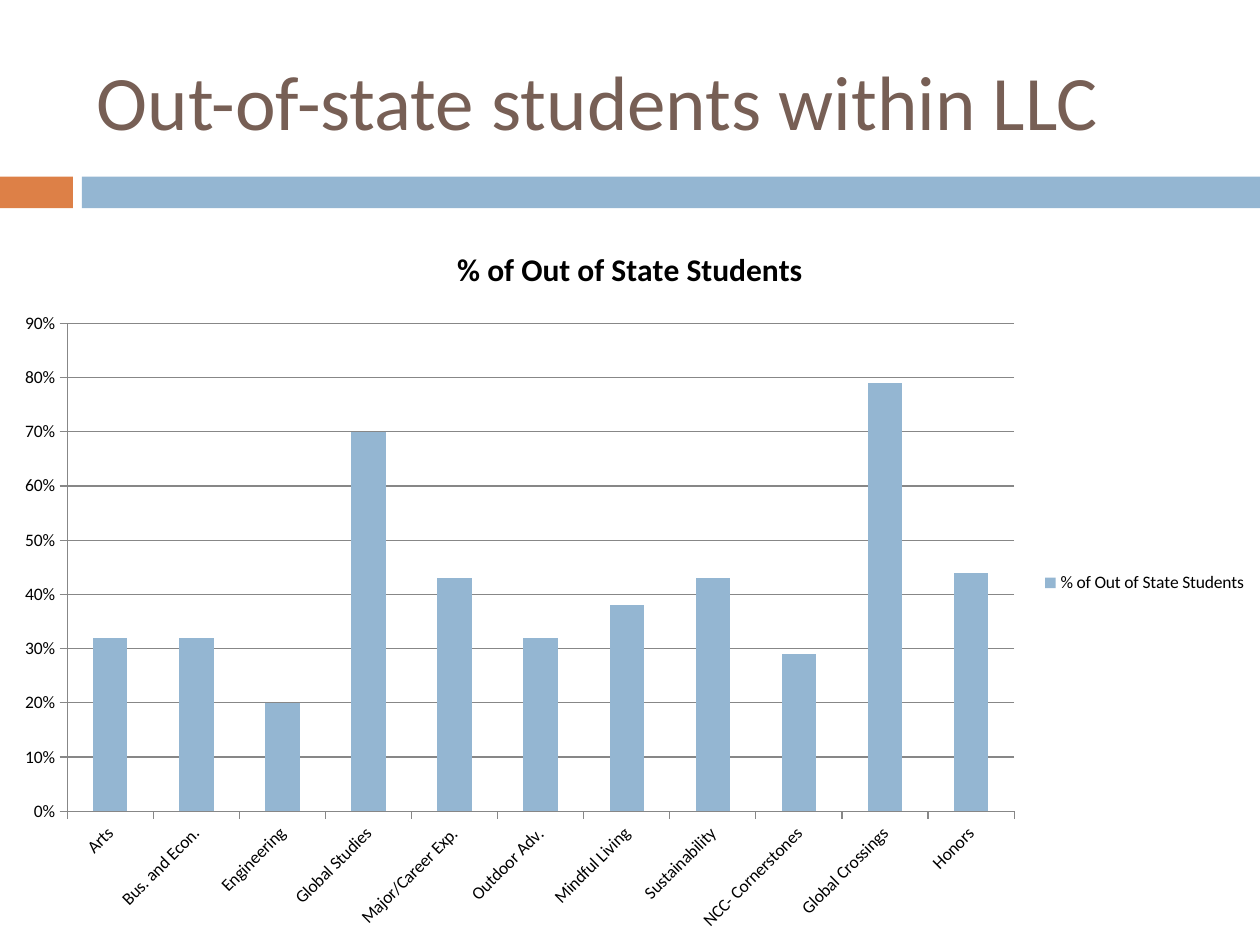
from dataclasses import dataclass

from pptx import Presentation
from pptx.chart.data import CategoryChartData as ChartData
from pptx.dml.color import RGBColor as RGB
from pptx.enum.chart import XL_CHART_TYPE as Kind
from pptx.enum.chart import XL_LEGEND_POSITION as Spot
from pptx.enum.chart import XL_TICK_MARK as Tick
from pptx.enum.shapes import MSO_SHAPE as Shape
from pptx.enum.text import MSO_ANCHOR as Anchor
from pptx.util import Cm, Pt


@dataclass(frozen=True)
class Theme:
    face: str = "Calibri"
    brown: RGB = RGB(0x77, 0x5F, 0x55)
    orange: RGB = RGB(0xDD, 0x80, 0x47)
    blue: RGB = RGB(0x94, 0xB6, 0xD2)
    gray: RGB = RGB(0x87, 0x87, 0x87)
    black: RGB = RGB(0, 0, 0)
    head: Pt = Pt(44)
    title: Pt = Pt(18)
    label: Pt = Pt(10)


THEME = Theme()
WIDTH, HEIGHT = 25.4, 19.05
NAME = "% of Out of State Students"
SHARES = {
    "Arts": 0.32,
    "Bus. and Econ.": 0.32,
    "Engineering": 0.2,
    "Global Studies": 0.7,
    "Major/Career Exp.": 0.43,
    "Outdoor Adv.": 0.32,
    "Mindful Living": 0.38,
    "Sustainability": 0.43,
    "NCC- Cornerstones": 0.29,
    "Global Crossings": 0.79,
    "Honors": 0.44,
}


def style(font, size, color, bold=False):
    font.name = THEME.face
    font.size = size
    font.bold = bold
    font.color.rgb = color


def add_band(slide, left, width, color):
    band = slide.shapes.add_shape(
        Shape.RECTANGLE, Cm(left), Cm(3.56), Cm(width), Cm(0.64))
    band.shadow.inherit = False
    band.fill.solid()
    band.fill.fore_color.rgb = color
    band.line.fill.background()


def add_head(slide, text):
    box = slide.shapes.add_textbox(Cm(1.7), Cm(0.64), Cm(22.66), Cm(2.74))
    frame = box.text_frame
    frame.word_wrap = True
    frame.vertical_anchor = Anchor.MIDDLE
    para = frame.paragraphs[0]
    para.text = text
    style(para.font, THEME.head, THEME.brown)


def draw_line(line):
    line.color.rgb = THEME.gray
    line.width = Pt(0.75)


def add_bars(slide):
    data = ChartData(number_format="0%")
    data.categories = list(SHARES)
    data.add_series(NAME, list(SHARES.values()))
    top = 4.45
    chart = slide.shapes.add_chart(
        Kind.COLUMN_CLUSTERED, Cm(0), Cm(top), Cm(WIDTH), Cm(HEIGHT - top),
        data).chart
    style(chart.font, THEME.label, THEME.black)

    # Title and legend
    frame = chart.chart_title.text_frame
    frame.text = NAME
    style(frame.paragraphs[0].font, THEME.title, THEME.black, True)
    chart.has_legend = True
    chart.legend.position = Spot.RIGHT
    chart.legend.include_in_layout = False

    # Columns
    plot = chart.plots[0]
    plot.gap_width = 150
    plot.vary_by_categories = False
    fill = plot.series[0].format.fill
    fill.solid()
    fill.fore_color.rgb = THEME.blue

    # Axes, with slanted category names
    for axis in (chart.category_axis, chart.value_axis):
        axis.major_tick_mark = Tick.OUTSIDE
        draw_line(axis.format.line)
        style(axis.tick_labels.font, THEME.label, THEME.black)
    names = chart.category_axis._element.txPr
    names.bodyPr.set("rot", str(-45 * 60000))
    scale = chart.value_axis
    scale.minimum_scale, scale.maximum_scale = 0, 0.9
    scale.major_unit = 0.1
    scale.tick_labels.number_format = "0%"
    scale.tick_labels.number_format_is_linked = False
    draw_line(scale.major_gridlines.format.line)


def main():
    deck = Presentation()
    deck.slide_width, deck.slide_height = Cm(WIDTH), Cm(HEIGHT)
    slide = deck.slides.add_slide(deck.slide_layouts[6])

    # Divider under the heading
    left = 1.65
    add_band(slide, 0, 1.47, THEME.orange)
    add_band(slide, left, WIDTH - left, THEME.blue)

    # Heading and chart
    add_head(slide, "Out-of-state students within LLC")
    add_bars(slide)
    deck.save("out.pptx")


if __name__ == "__main__":
    main()
